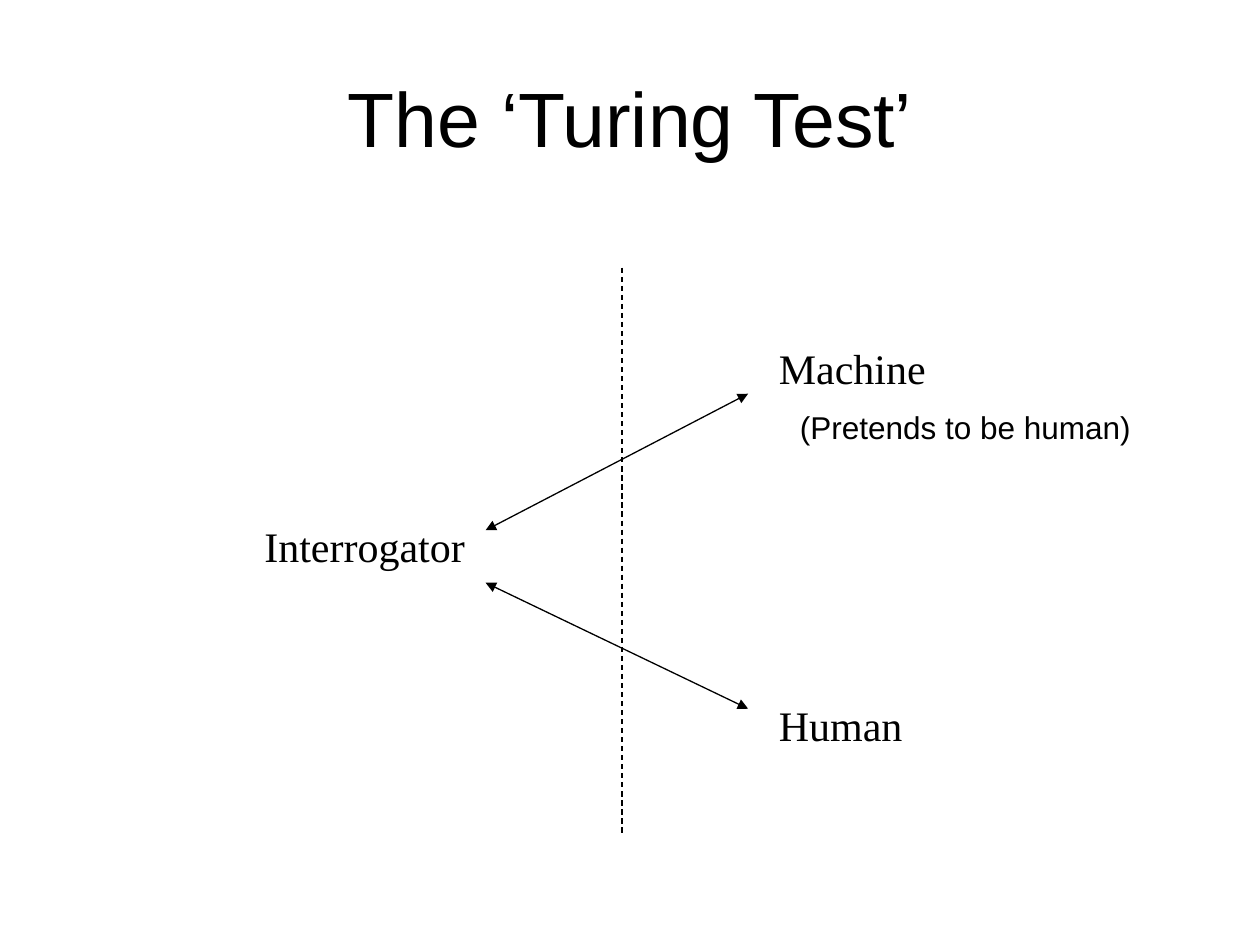
from lxml import etree
from pptx import Presentation
from pptx import util as u
from pptx.dml.color import RGBColor
from pptx.enum import dml, shapes, text
from pptx.oxml.ns import qn

BLACK = RGBColor(0, 0, 0)
SANS, SERIF = "Arial", "Times New Roman"
COLUMNS, ROWS = 120, 90


class Diagram:
    """Draws labels and lines on one slide, measured in grid columns and rows."""

    def __init__(self, deck):
        self.slide = deck.slides.add_slide(deck.slide_layouts[6])
        self.column = deck.slide_width / COLUMNS
        self.row = deck.slide_height / ROWS

    def place(self, *pairs):
        return [round(n * unit) for pair in pairs
                for n, unit in zip(pair, (self.column, self.row))]

    def label(self, words, at, size, points=24, font=SERIF):
        frame = self.slide.shapes.add_textbox(*self.place(at, size)).text_frame
        frame.word_wrap = False
        frame.auto_size = text.MSO_AUTO_SIZE.SHAPE_TO_FIT_TEXT
        run = frame.paragraphs[0].add_run()
        run.text = words
        run.font.size = u.Pt(points)
        run.font.name = font
        run.font.color.rgb = BLACK
        return frame

    def title(self, words, at, size):
        frame = self.label(words, at, size, 44, SANS)
        frame.word_wrap = True
        frame.auto_size = text.MSO_AUTO_SIZE.NONE
        frame.vertical_anchor = text.MSO_ANCHOR.MIDDLE
        frame.paragraphs[0].alignment = text.PP_ALIGN.CENTER

    def line(self, start, end):
        link = self.slide.shapes.add_connector(
            shapes.MSO_CONNECTOR.STRAIGHT, *self.place(start, end))
        link.line.color.rgb = BLACK
        link.line.width = u.Pt(0.75)
        etree.SubElement(link._element.spPr, qn("a:effectLst"))
        return link

    def divider(self, start, end):
        self.line(start, end).line.dash_style = dml.MSO_LINE.DASH

    def exchange(self, start, end):
        stroke = self.line(start, end)._element.spPr.find(qn("a:ln"))
        for tip in ("a:headEnd", "a:tailEnd"):
            etree.SubElement(stroke, qn(tip), type="triangle")


def main():
    deck = Presentation()
    deck.slide_width, deck.slide_height = u.Inches(10), u.Inches(7.5)
    test = Diagram(deck)

    test.title("The ‘Turing Test’", (6, 3.6), (108, 15))
    for role, at, width in (
        ("Interrogator", (24, 49), 21.5),
        ("Machine", (73, 32), 16.5),
        ("Human", (73, 66), 14.2),
    ):
        test.label(role, at, (width, 6))
    for asked, answered in ((50.5, 37.5), (55.5, 67.5)):
        test.exchange((46.25, asked), (71.25, answered))
    test.divider((59.25, 25.5), (59.25, 79.5))
    test.label("(Pretends to be human)", (75, 38.25), (34.2, 4.8), 18, SANS)

    deck.save("out.pptx")


if __name__ == "__main__":
    main()
